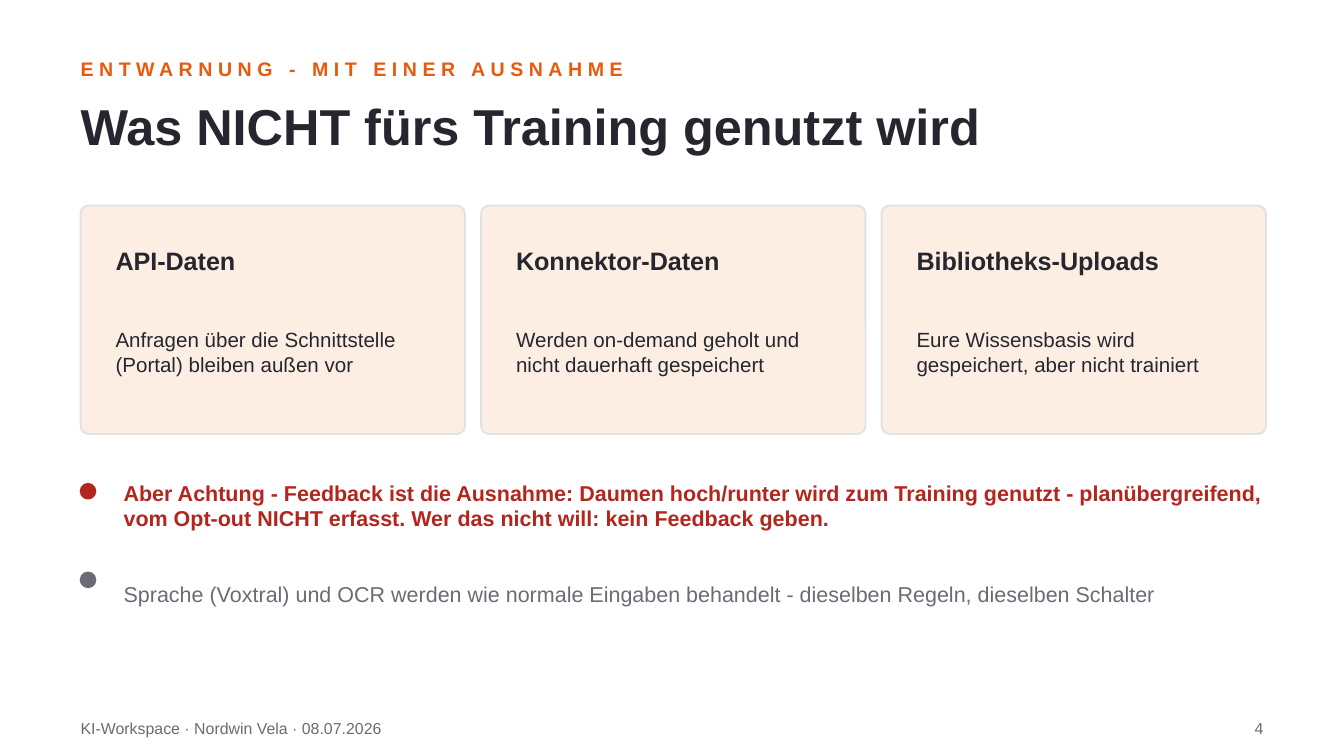
import pptx
import pptx.util
import pptx.dml.color
import pptx.enum.shapes
import pptx.enum.text

RGB = pptx.dml.color.RGBColor
ORANGE = RGB(0xE8, 0x59, 0x0C)
INK = RGB(0x26, 0x26, 0x2E)
GRAY = RGB(0x6B, 0x6B, 0x75)
RED = RGB(0xB3, 0x26, 0x1E)
CREAM = RGB(0xFD, 0xEE, 0xE3)
BORDER = RGB(0xE4, 0xE2, 0xDF)

SHAPE = pptx.enum.shapes.MSO_SHAPE
ALIGN = pptx.enum.text.PP_ALIGN
PX = 9144  # 100 px to the inch

prs = pptx.Presentation()
prs.slide_width = pptx.util.Inches(10)
prs.slide_height = pptx.util.Inches(5.625)
s = prs.slides.add_slide(prs.slide_layouts[6])


def add_text(text, x, y, w, h, size, color, bold=False, align=ALIGN.LEFT):
    tf = s.shapes.add_textbox(x * PX, y * PX, w * PX, h * PX).text_frame
    frame = {"word_wrap": True, "vertical_anchor": pptx.enum.text.MSO_ANCHOR.MIDDLE,
             "margin_left": 0, "margin_right": 0, "margin_top": 0, "margin_bottom": 0}
    for name, value in frame.items():
        setattr(tf, name, value)
    p = tf.paragraphs[0]
    p.alignment = align
    r = p.add_run()
    r.text = text
    for name, value in {"name": "Arial", "size": pptx.util.Pt(size), "bold": bold}.items():
        setattr(r.font, name, value)
    r.font.color.rgb = color
    return r


def add_box(kind, x, y, w, h, fill, line):
    sp = s.shapes.add_shape(kind, x * PX, y * PX, w * PX, h * PX)
    sp.shadow.inherit = False
    sp.fill.solid()
    sp.fill.fore_color.rgb = fill
    sp.line.color.rgb = line
    sp.line.width = pptx.util.Pt(1)
    return sp


# Heading
r = add_text("ENTWARNUNG - MIT EINER AUSNAHME", 60, 38, 880, 26, 10.5, ORANGE, True)
r._r.get_or_add_rPr().set("spc", "300")
add_text("Was NICHT fürs Training genutzt wird", 60, 62, 880, 62, 27, INK, True)

# Cards
cards = [
    ("API-Daten", "Anfragen über die Schnittstelle (Portal) bleiben außen vor"),
    ("Konnektor-Daten", "Werden on-demand geholt und nicht dauerhaft gespeichert"),
    ("Bibliotheks-Uploads", "Eure Wissensbasis wird gespeichert, aber nicht trainiert"),
]
for i, (title, body) in enumerate(cards):
    x = 60 + i * 298
    sp = add_box(SHAPE.ROUNDED_RECTANGLE, x, 153, 286, 170, CREAM, BORDER)
    sp.adjustments[0] = 0.035
    add_text(title, x + 26, 178, 234, 32, 13.5, INK, True)
    add_text(body, x + 26, 214, 234, 95, 11, INK)

# Notes with dots
notes = [
    ("Aber Achtung - Feedback ist die Ausnahme: Daumen hoch/runter wird zum Training "
     "genutzt - planübergreifend, vom Opt-out NICHT erfasst. Wer das nicht will: "
     "kein Feedback geben.", RED, True),
    ("Sprache (Voxtral) und OCR werden wie normale Eingaben behandelt - dieselben "
     "Regeln, dieselben Schalter", GRAY, False),
]
for i, (text, color, bold) in enumerate(notes):
    y = 345 + i * 66
    add_box(SHAPE.OVAL, 60, y + 15, 11, 11, color, color)
    add_text(text, 92, y, 850, 62, 11.5, color, bold)

# Footer
add_text("KI-Workspace · Nordwin Vela · 08.07.2026", 60, 530, 600, 24, 8.5, GRAY)
add_text("4", 880, 530, 60, 24, 8.5, GRAY, align=ALIGN.RIGHT)

prs.save("out.pptx")
